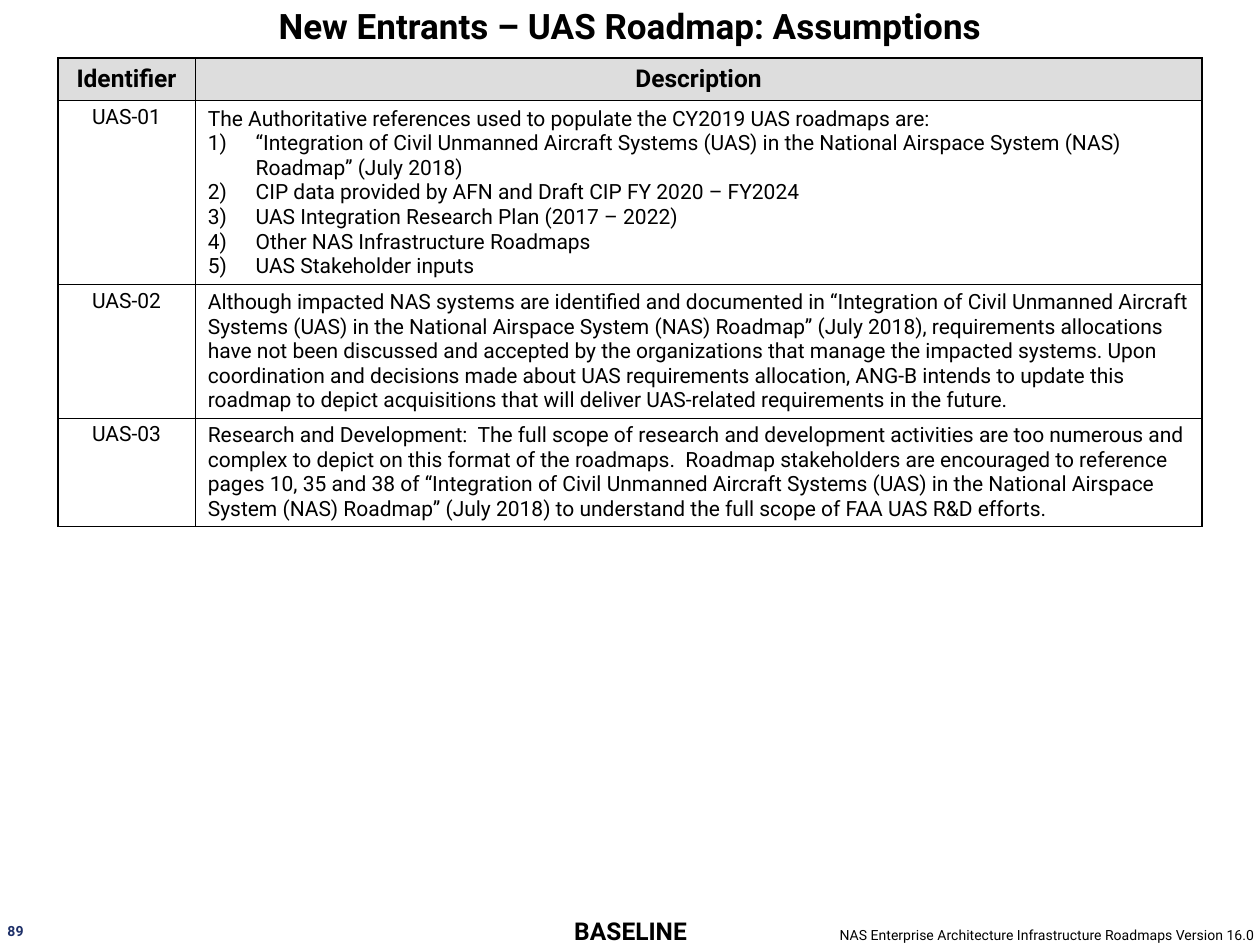
from dataclasses import dataclass

from lxml import etree
from pptx import Presentation
from pptx.dml.color import RGBColor
from pptx.enum import text as t
from pptx.oxml import ns
from pptx.util import Inches, Pt


@dataclass(frozen=True)
class Theme:
    font: str = "Roboto"
    ink: str = "000000"
    navy: str = "1D2F68"
    header: str = "DDDDDD"
    paper: str = "FFFFFF"
    title: int = 20
    heading: int = 14
    body: int = 12
    small: int = 8
    outer_line: float = 1
    inner_line: float = 0.5


THEME = Theme()
LEFT, CENTER, RIGHT = t.PP_ALIGN.LEFT, t.PP_ALIGN.CENTER, t.PP_ALIGN.RIGHT
TOP, MIDDLE = t.MSO_ANCHOR.TOP, t.MSO_ANCHOR.MIDDLE

COLUMN_WIDTHS = [1.09, 7.99]
ROW_HEIGHTS = [0.34, 1.46, 1.06, 0.86]
HEADINGS = ["Identifier", "Description"]
REFERENCES = [
    "“Integration of Civil Unmanned Aircraft Systems (UAS) in the National "
    "Airspace System (NAS) Roadmap” (July 2018)",
    "CIP data provided by AFN and Draft CIP FY 2020 – FY2024",
    "UAS Integration Research Plan (2017 – 2022)",
    "Other NAS Infrastructure Roadmaps",
    "UAS Stakeholder inputs",
]
# Each assumption: identifier, description, numbered items
ASSUMPTIONS = [
    ("UAS-01",
     "The Authoritative references used to populate the CY2019 UAS roadmaps are:",
     REFERENCES),
    ("UAS-02",
     "Although impacted NAS systems are identified and documented in "
     "“Integration of Civil Unmanned Aircraft Systems (UAS) in the National "
     "Airspace System (NAS) Roadmap” (July 2018), requirements allocations have "
     "not been discussed and accepted by the organizations that manage the "
     "impacted systems. Upon coordination and decisions made about UAS "
     "requirements allocation, ANG-B intends to update this roadmap to depict "
     "acquisitions that will deliver UAS-related requirements in the future.",
     []),
    ("UAS-03",
     "Research and Development:  The full scope of research and development "
     "activities are too numerous and complex to depict on this format of the "
     "roadmaps.  Roadmap stakeholders are encouraged to reference pages 10, 35 "
     "and 38 of “Integration of Civil Unmanned Aircraft Systems (UAS) in the "
     "National Airspace System (NAS) Roadmap” (July 2018) to understand the "
     "full scope of FAA UAS R&D efforts.",
     []),
]


def write(paragraph, words, size, bold=False, align=LEFT, color=THEME.ink):
    paragraph.text = words
    paragraph.alignment = align
    font = paragraph.font
    font.name, font.size, font.bold = THEME.font, Pt(size), bold
    font.color.rgb = RGBColor.from_string(color)


def add_title(slide, words):
    title = slide.shapes.title
    title.left, title.top = Inches(0), Inches(0)
    title.width, title.height = Inches(10), Inches(0.4)
    title.text_frame.vertical_anchor = MIDDLE
    title.text_frame.auto_size = t.MSO_AUTO_SIZE.NONE
    write(title.text_frame.paragraphs[0], words, THEME.title, True, CENTER)


def add_label(slide, box, words, size, side_inset=0, wrap=True, anchor=TOP, **style):
    frame = slide.shapes.add_textbox(*map(Inches, box)).text_frame
    frame.word_wrap = wrap
    frame.vertical_anchor = anchor
    frame.margin_left = frame.margin_right = Inches(side_inset)
    frame.margin_top = frame.margin_bottom = 0
    write(frame.paragraphs[0], words, size, **style)


def number_paragraph(paragraph):
    """Give a paragraph a hanging 1), 2), 3) number."""
    props = paragraph._p.get_or_add_pPr()
    indent = Inches(0.38)
    props.set("marL", str(indent))
    props.set("indent", str(-indent))
    etree.SubElement(props, ns.qn("a:buFont"), typeface="+mj-lt")
    etree.SubElement(props, ns.qn("a:buAutoNum"), type="arabicParenR")
    # Numbering must come before the default run properties
    defaults = props.find(ns.qn("a:defRPr"))
    if defaults is not None:
        props.append(defaults)


def border_cell(cell, widths):
    """Draw cell borders; widths maps L, R, T and B to points."""
    props = cell._tc.get_or_add_tcPr()
    for position, (side, width) in enumerate(widths.items()):
        line = etree.Element(ns.qn(f"a:ln{side}"), w=str(Pt(width)))
        fill = etree.SubElement(line, ns.qn("a:solidFill"))
        etree.SubElement(fill, ns.qn("a:srgbClr"), val=THEME.ink)
        props.insert(position, line)


def format_cell(cell, fill, vertical_inset, anchor=TOP):
    cell.fill.solid()
    cell.fill.fore_color.rgb = RGBColor.from_string(fill)
    cell.margin_left = cell.margin_right = Inches(0.1)
    cell.margin_top = cell.margin_bottom = Inches(vertical_inset)
    cell.vertical_anchor = anchor


def fill_header(table):
    for column, heading in enumerate(HEADINGS):
        cell = table.cell(0, column)
        format_cell(cell, THEME.header, 0.05)
        write(cell.text_frame.paragraphs[0], heading, THEME.heading, True, CENTER)


def fill_assumption(table, row, identifier, description, items):
    id_cell, description_cell = table.cell(row, 0), table.cell(row, 1)
    format_cell(id_cell, THEME.paper, 0.03)
    format_cell(description_cell, THEME.paper, 0.03, MIDDLE)
    write(id_cell.text_frame.paragraphs[0], identifier, THEME.body, align=CENTER)
    frame = description_cell.text_frame
    write(frame.paragraphs[0], description, THEME.body)
    for item in items:
        paragraph = frame.add_paragraph()
        write(paragraph, item, THEME.body)
        number_paragraph(paragraph)


def border_table(table):
    """Heavier lines around the sides and the header, thin ones elsewhere."""
    outer, inner = THEME.outer_line, THEME.inner_line
    last = len(COLUMN_WIDTHS) - 1
    for row in range(len(ROW_HEIGHTS)):
        for column in range(len(COLUMN_WIDTHS)):
            border_cell(table.cell(row, column), {
                "L": outer if column == 0 else inner,
                "R": outer if column == last else inner,
                "T": outer if row <= 1 else inner,
                "B": outer if row == 0 else inner,
            })


def add_assumptions_table(slide):
    table = slide.shapes.add_table(
        len(ROW_HEIGHTS), len(COLUMN_WIDTHS), Inches(0.46), Inches(0.46),
        Inches(sum(COLUMN_WIDTHS)), Inches(sum(ROW_HEIGHTS))).table
    table.horz_banding = False
    for column, width in zip(table.columns, COLUMN_WIDTHS):
        column.width = Inches(width)
    for row, height in zip(table.rows, ROW_HEIGHTS):
        row.height = Inches(height)
    fill_header(table)
    for row, assumption in enumerate(ASSUMPTIONS, start=1):
        fill_assumption(table, row, *assumption)
    border_table(table)


def add_footer(slide):
    add_label(slide, (6.3, 7.35, 3.68, 0.13),
              "NAS Enterprise Architecture Infrastructure Roadmaps Version 16.0",
              THEME.small, side_inset=0.02, align=RIGHT)
    add_label(slide, (4.23, 7.27, 1.55, 0.24), "BASELINE", THEME.heading,
              anchor=MIDDLE, bold=True, align=CENTER)
    add_label(slide, (0.06, 7.32, 0.14, 0.13), "89", THEME.small,
              wrap=False, bold=True, color=THEME.navy)


def main():
    deck = Presentation()
    deck.slide_width, deck.slide_height = Inches(10), Inches(7.5)
    slide = deck.slides.add_slide(deck.slide_layouts[5])
    add_title(slide, "New Entrants – UAS Roadmap: Assumptions")
    add_assumptions_table(slide)
    add_footer(slide)
    deck.save("out.pptx")


if __name__ == "__main__":
    main()
